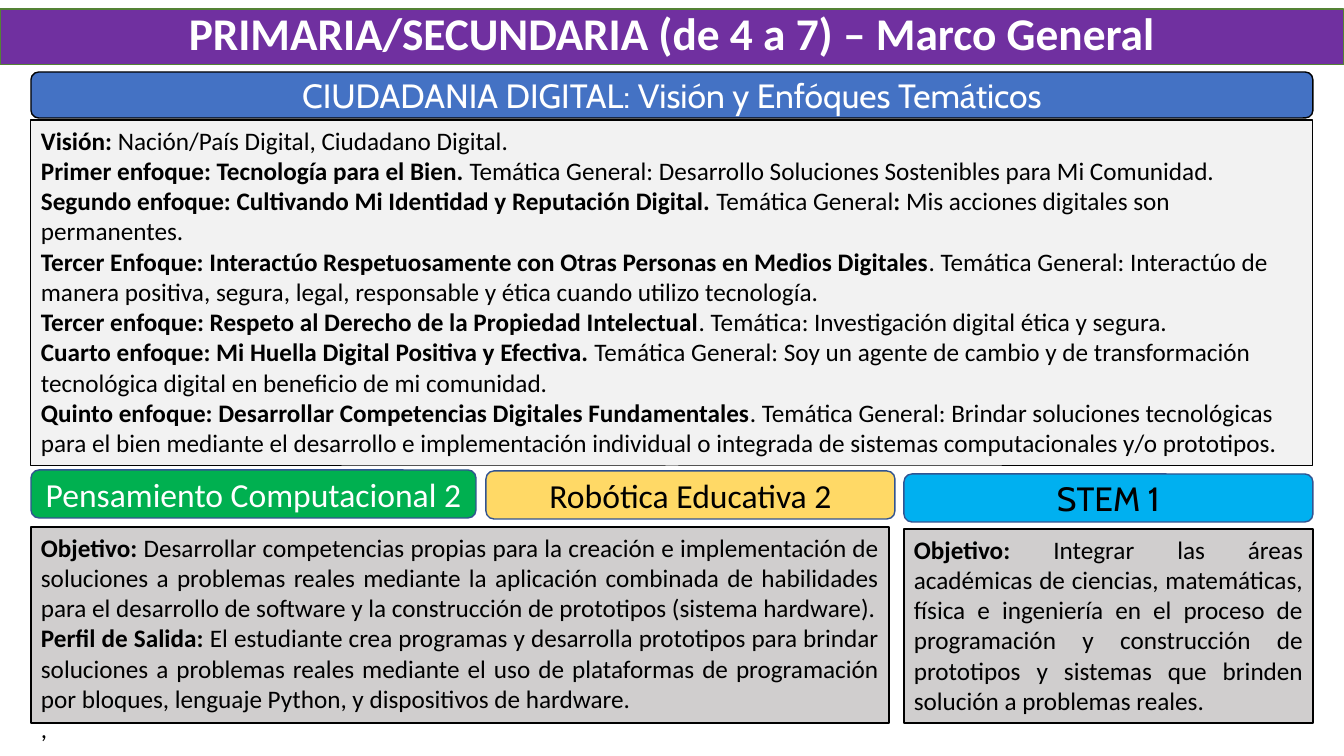
from pptx import Presentation
from pptx.dml.color import RGBColor
from pptx.enum.shapes import MSO_SHAPE
from pptx.enum.text import MSO_ANCHOR, PP_ALIGN
from pptx.util import Emu, Pt

SCALE = 914400 / 100.8
LEFT, WIDTH = 31, 1282
STEM_LEFT, STEM_WIDTH = 904, 409
BLACK, WHITE, GREY, NAVY = "000000", "FFFFFF", "D0CECE", "325491"

VISION = [
    "**Visión: **Nación/País Digital, Ciudadano Digital.",
    "**Primer enfoque: Tecnología para el Bien. **Temática General: Desarrollo Soluciones "
    "Sostenibles para Mi Comunidad.",
    "**Segundo enfoque: Cultivando Mi Identidad y Reputación Digital. **Temática General**: **"
    "Mis acciones digitales son permanentes.",
    "**Tercer Enfoque: Interactúo Respetuosamente con Otras Personas en Medios Digitales**. "
    "Temática General: Interactúo de manera positiva, segura, legal, responsable y ética "
    "cuando utilizo tecnología.",
    "**Tercer enfoque: Respeto al Derecho de la Propiedad Intelectual**. Temática: "
    "Investigación digital ética y segura.",
    "**Cuarto enfoque: Mi Huella Digital Positiva y Efectiva. **Temática General: Soy un agente "
    "de cambio y de transformación tecnológica digital en beneficio de mi comunidad.",
    "**Quinto enfoque: Desarrollar Competencias Digitales Fundamentales**. Temática General: "
    "Brindar soluciones tecnológicas para el bien mediante el desarrollo e implementación "
    "individual o integrada de sistemas computacionales y/o prototipos.",
]
OBJETIVO = [
    "**Objetivo: **Desarrollar competencias propias para la creación e implementación de "
    "soluciones a problemas reales mediante la aplicación combinada de habilidades para el "
    "desarrollo de software y la construcción de prototipos (sistema hardware).",
    "**Perfil de Salida: **El estudiante crea programas y desarrolla prototipos para brindar "
    "soluciones a problemas reales mediante el uso de plataformas de programación por bloques, "
    "lenguaje Python, y dispositivos de hardware.",
    ",",
]
OBJETIVO_STEM = [
    "**Objetivo: **Integrar las áreas académicas de ciencias, matemáticas, física e ingeniería "
    "en el proceso de programación y construcción de prototipos y sistemas que brinden solución "
    "a problemas reales.",
]


def px(n):
    return Emu(round(n * SCALE))


def rgb(color):
    return RGBColor.from_string(color)


class Deck:
    """Holds the style and the current slide."""

    font = "Calibri"
    body_size = 18
    head_size = 24

    def __init__(self):
        self.prs = Presentation()
        self.prs.slide_width, self.prs.slide_height = px(1344), px(756)
        self.s = self.prs.slides.add_slide(self.prs.slide_layouts[6])

    def box(self, kind, at, fill, line, weight, anchor):
        sp = self.s.shapes.add_shape(kind, *map(px, at))
        sp.shadow.inherit = False
        sp.fill.solid()
        sp.fill.fore_color.rgb = rgb(fill)
        sp.line.color.rgb = rgb(line)
        sp.line.width = Pt(weight)
        tf = sp.text_frame
        tf.word_wrap = True
        tf.vertical_anchor = anchor
        return tf

    def style(self, r, size, color, bold, font=None):
        r.font.name = font or self.font
        r.font.size = Pt(size)
        r.font.color.rgb = rgb(color)
        r.font.bold = bold

    def heading(self, tf, text, size, color, bold=False, font=None):
        tf.text = text
        p = tf.paragraphs[0]
        p.alignment = PP_ALIGN.CENTER
        self.style(p.runs[0], size, color, bold, font)
        return p

    def title(self, text, at, fill, line):
        tf = self.box(MSO_SHAPE.RECTANGLE, at, fill, line, 0.75, MSO_ANCHOR.MIDDLE)
        self.heading(tf, text, 32.4, WHITE, bold=True).line_spacing = 0.8

    def banner(self, text, at, fill, line=NAVY, color=WHITE, font=None):
        tf = self.box(MSO_SHAPE.ROUNDED_RECTANGLE, at, fill, line, 1, MSO_ANCHOR.MIDDLE)
        self.heading(tf, text, self.head_size, color, font=font)

    def panel(self, texts, at, fill, weight=1, align=PP_ALIGN.JUSTIFY):
        tf = self.box(MSO_SHAPE.RECTANGLE, at, fill, BLACK, weight, MSO_ANCHOR.TOP)
        for i, text in enumerate(texts):
            p = tf.add_paragraph() if i else tf.paragraphs[0]
            p.alignment = align if "**" in text else PP_ALIGN.LEFT
            for j, part in enumerate(text.split("**")):
                if part:
                    r = p.add_run()
                    r.text = part
                    self.style(r, self.body_size, BLACK, j % 2 == 1)


def main():
    deck = Deck()
    deck.title("PRIMARIA/SECUNDARIA (de 4 a 7) – Marco General", (0, 9, 1344, 56), "7030A0", "548235")
    deck.banner("Pensamiento Computacional 2", (LEFT, 470, 445, 48), "00B050")
    deck.banner("Robótica Educativa 2", (486, 471, 409, 48), "FFD966", color=BLACK)
    deck.banner("CIUDADANIA DIGITAL: Visión y Enfóques Temáticos", (LEFT, 72, WIDTH, 46), "4472C4",
                line=BLACK, font="Cabin")
    deck.panel(VISION, (LEFT, 120, WIDTH, 346), "F2F2F2", weight=0.75, align=PP_ALIGN.LEFT)
    deck.panel(OBJETIVO, (LEFT, 527, 858, 196), GREY)
    deck.panel(OBJETIVO_STEM, (STEM_LEFT, 529, STEM_WIDTH, 194), GREY)
    deck.banner("STEM 1", (STEM_LEFT, 474, STEM_WIDTH, 48), "00B0F0", color=BLACK, font="Cabin")
    deck.prs.save("out.pptx")


if __name__ == "__main__":
    main()
